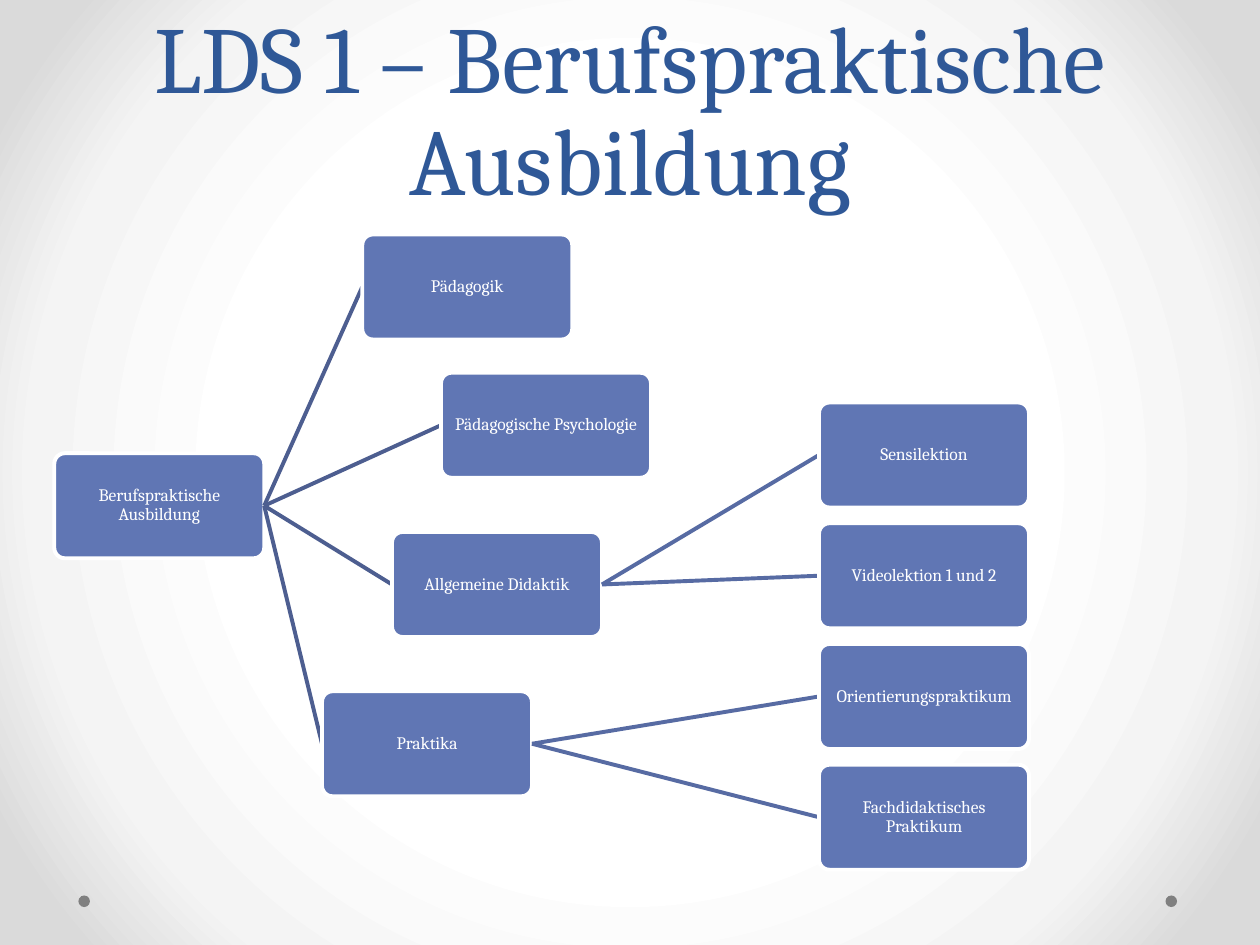
from pptx import Presentation
from pptx.dml.color import RGBColor
from pptx.enum.shapes import MSO_CONNECTOR, MSO_SHAPE
from pptx.enum.text import MSO_ANCHOR, PP_ALIGN
from pptx.oxml.ns import qn
from pptx.util import Pt
from lxml.etree import SubElement

FONT = "Cambria"
NODE_W, NODE_H = 120, 60
LEAF_X, LEAF_Y, LEAF_STEP = 437, 96, 69
EDGES = ["4D5E90", "576BA3"]  # line colour by tree level


def leaf(text, row):
    return text, LEAF_X, LEAF_Y + row * LEAF_STEP, []


# Each node: text, left, top, children
TREE = ("Berufspraktische Ausbildung", 0, 125, [
    ("Pädagogik", 176, 0, []),
    ("Pädagogische Psychologie", 221, 79, []),
    ("Allgemeine Didaktik", 193, 170, [
        leaf("Sensilektion", 0),
        leaf("Videolektion 1 und 2", 1),
    ]),
    ("Praktika", 153, 261, [
        leaf("Orientierungspraktikum", 2),
        leaf("Fachdidaktisches Praktikum", 3),
    ]),
])


def color(code):
    return RGBColor.from_string(code)


def write(frame, text, size, code, anchor, spacing):
    frame.word_wrap = True
    frame.vertical_anchor = anchor
    frame.text = text
    para = frame.paragraphs[0]
    para.alignment = PP_ALIGN.CENTER
    para.line_spacing = spacing
    font = para.runs[0].font
    font.name, font.size = FONT, Pt(size)
    font.color.rgb = color(code)
    return para


def add_backdrop(slide):
    fill = slide.background.fill
    fill.gradient()
    grad = slide.background._cSld.find(".//" + qn("a:gradFill"))
    for child in list(grad):
        grad.remove(child)
    # Radial gradient, brightest in the middle
    stops = SubElement(grad, qn("a:gsLst"))
    for pos, code in [(50, "FFFFFF"), (76, "F4F4F4"), (92, "DADADA")]:
        stop = SubElement(stops, qn("a:gs"), pos=str(pos * 1000))
        SubElement(stop, qn("a:srgbClr"), val=code)
    shade = SubElement(grad, qn("a:path"), {"path": "circle"})
    SubElement(shade, qn("a:fillToRect"),
               {side: "50000" for side in "ltrb"})


def add_dots(slide, left, top, width):
    size = 6.6
    for x in (left, left + width - size):
        dot = slide.shapes.add_shape(
            MSO_SHAPE.OVAL, Pt(x), Pt(top), Pt(size), Pt(size))
        dot.shadow.inherit = False
        dot.fill.solid()
        dot.fill.fore_color.rgb = color("808080")
        dot.line.fill.background()


def add_title(slide, left, top, width, height):
    box = slide.shapes.add_textbox(Pt(left), Pt(top), Pt(width), Pt(height))
    write(box.text_frame, "LDS 1 – Berufspraktische Ausbildung",
          54, "2F5897", MSO_ANCHOR.BOTTOM, Pt(58))


def add_node(slide, text, left, top):
    node = slide.shapes.add_shape(
        MSO_SHAPE.ROUNDED_RECTANGLE, Pt(left), Pt(top), Pt(NODE_W), Pt(NODE_H))
    node.adjustments[0] = 0.1
    node.shadow.inherit = False
    node.fill.solid()
    node.fill.fore_color.rgb = color("6076B4")
    node.line.color.rgb = color("FFFFFF")
    node.line.width = Pt(2.25)
    frame = node.text_frame
    frame.margin_left = frame.margin_right = Pt(2.5)
    frame.margin_top = frame.margin_bottom = Pt(2.5)
    para = write(frame, text, 10, "FFFFFF", MSO_ANCHOR.MIDDLE, 0.9)
    para.space_after = Pt(3.5)


def add_edge(slide, start, end, code):
    edge = slide.shapes.add_connector(
        MSO_CONNECTOR.STRAIGHT, *[Pt(v) for v in start + end])
    edge.line.color.rgb = color(code)
    edge.line.width = Pt(2.25)
    SubElement(edge._element.spPr, qn("a:effectLst"))


def add_tree(slide, left, top, tree, level=0):
    text, x, y, kids = tree
    add_node(slide, text, left + x, top + y)
    start = (left + x + NODE_W, top + y + NODE_H / 2)
    # Each line goes behind the child it leads to
    for kid in kids:
        end = (left + kid[1], top + kid[2] + NODE_H / 2)
        add_edge(slide, start, end, EDGES[level])
        add_tree(slide, left, top, kid, level + 1)


def main():
    deck = Presentation()
    deck.slide_width, deck.slide_height = Pt(720), Pt(540)
    slide = deck.slides.add_slide(deck.slide_layouts[6])
    add_backdrop(slide)
    add_dots(slide, 44.8, 511.7, 627.8)
    add_title(slide, 36, 0, 648, 126)
    add_tree(slide, 31, 134, TREE)
    deck.save("out.pptx")


if __name__ == "__main__":
    main()
